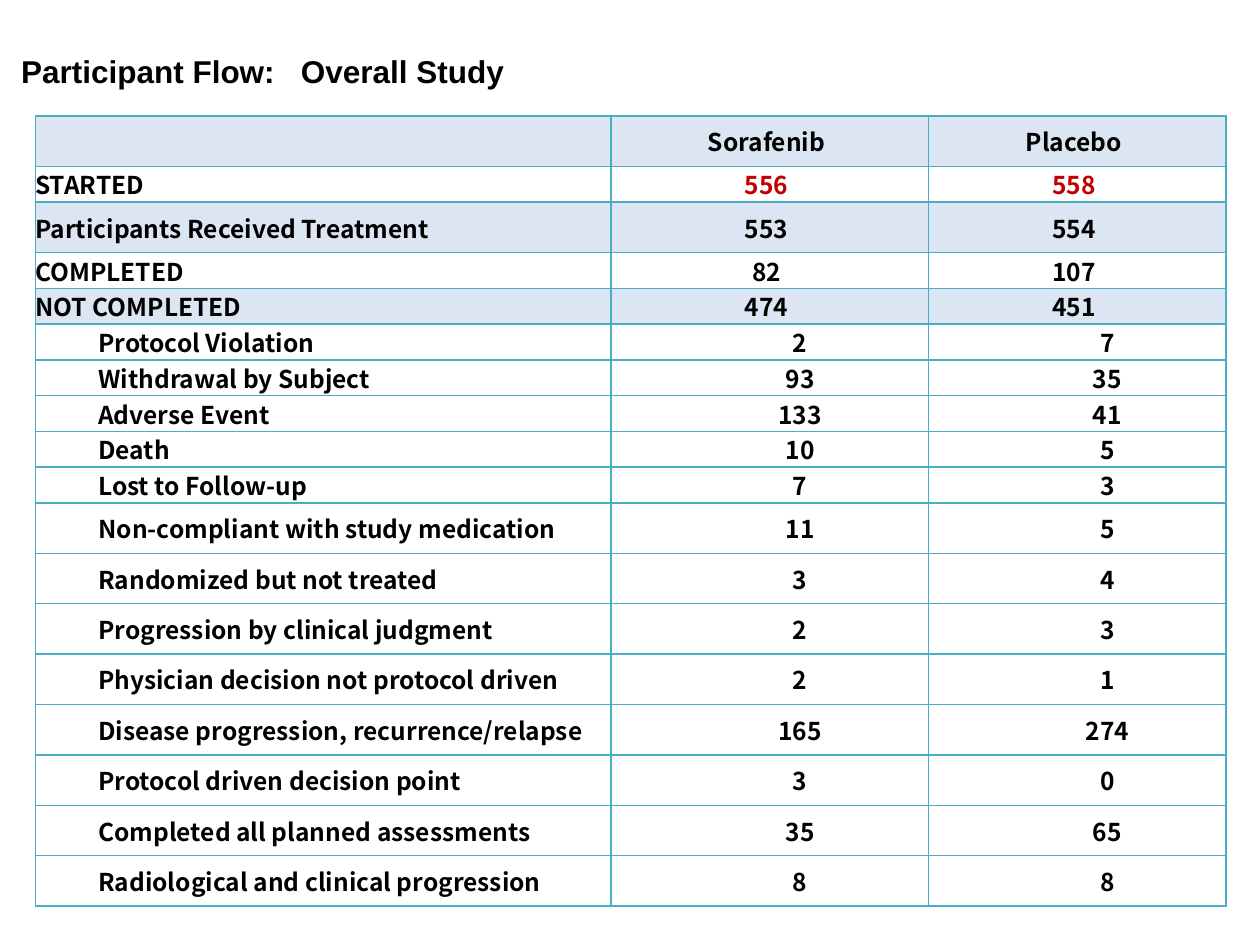
from lxml import etree
from pptx import Presentation
from pptx.dml.color import RGBColor
from pptx.enum.text import MSO_ANCHOR, PP_ALIGN
from pptx.oxml.ns import qn
from pptx.util import Inches, Pt

BLACK = RGBColor(0x00, 0x00, 0x00)
RED = RGBColor(0xC0, 0x00, 0x00)
TEAL = RGBColor(0x4B, 0xAC, 0xC6)
PALE_BLUE = RGBColor(0xDC, 0xE6, 0xF2)

TITLE_FONT = "Arial"
TABLE_FONT = "Noto Sans CJK KR"

COLUMN_WIDTHS = (4.57, 2.52, 2.36)
SHORT_ROW, TALL_ROW = 0.27, 0.4
REASON_INDENT = 0.5
REASON_VALUE_MARGIN = 0.48
VALUE_MARGIN = 0.05

HEADER = ("", "Sorafenib", "Placebo")
MILESTONES = [
    ("STARTED", 556, 558),
    ("Participants Received Treatment", 553, 554),
    ("COMPLETED", 82, 107),
    ("NOT COMPLETED", 474, 451),
]
REASONS = [
    ("Protocol Violation", 2, 7),
    ("Withdrawal by Subject", 93, 35),
    ("Adverse Event", 133, 41),
    ("Death", 10, 5),
    ("Lost to Follow-up", 7, 3),
    ("Non-compliant with study medication", 11, 5),
    ("Randomized but not treated", 3, 4),
    ("Progression by clinical judgment", 2, 3),
    ("Physician decision not protocol driven", 2, 1),
    ("Disease progression, recurrence/relapse", 165, 274),
    ("Protocol driven decision point", 3, 0),
    ("Completed all planned assessments", 35, 65),
    ("Radiological and clinical progression", 8, 8),
]
ROWS = [HEADER] + MILESTONES + REASONS
FIRST_REASON = 1 + len(MILESTONES)
STARTED_ROW = 1
SHADED_ROWS = (0, 2, 4)
TALL_ROWS = {0, 2, *range(10, len(ROWS))}


def set_font(font, name, size, color):
    font.name = name
    font.size = Pt(size)
    font.bold = True
    font.color.rgb = color


def add_borders(cell, color, width):
    """Draw the four sides; lines must come before the fill in the cell."""
    properties = cell._tc.get_or_add_tcPr()
    for position, side in enumerate(("lnL", "lnR", "lnT", "lnB")):
        line = etree.Element(qn(f"a:{side}"), w=str(Pt(width)))
        fill = etree.SubElement(line, qn("a:solidFill"))
        etree.SubElement(fill, qn("a:srgbClr"), val=str(color))
        properties.insert(position, line)


def add_title(slide, left, top, width, height):
    text_box = slide.shapes.add_textbox(left, top, width, height)
    frame = text_box.text_frame
    frame.word_wrap = True
    frame.vertical_anchor = MSO_ANCHOR.MIDDLE
    paragraph = frame.paragraphs[0]
    paragraph.text = "Participant Flow:\tOverall Study"
    set_font(paragraph.font, TITLE_FONT, 18, BLACK)
    # A tab stop sets the gap between the two parts of the title
    tab_list = etree.Element(qn("a:tabLst"))
    etree.SubElement(tab_list, qn("a:tab"), pos=str(Inches(2.22)), algn="l")
    paragraph._p.get_or_add_pPr().insert(0, tab_list)


def fill_cell(cell, value, row, column):
    is_reason = row >= FIRST_REASON
    is_value = column > 0
    cell.margin_left = cell.margin_right = 0
    cell.margin_top = cell.margin_bottom = 0
    cell.vertical_anchor = MSO_ANCHOR.MIDDLE

    # Labels are indented by level; values are centred, reasons further right
    paragraph = cell.text_frame.paragraphs[0]
    paragraph.text = str(value)
    if is_value:
        paragraph.alignment = PP_ALIGN.CENTER
        if is_reason:
            cell.margin_left = Inches(REASON_VALUE_MARGIN)
        else:
            cell.margin_right = Inches(VALUE_MARGIN)
    elif is_reason:
        paragraph.level = 1
        paragraph_properties = paragraph._p.get_or_add_pPr()
        paragraph_properties.set("marL", str(Inches(REASON_INDENT)))
        paragraph_properties.set("indent", "0")
    color = RED if is_value and row == STARTED_ROW else BLACK
    set_font(paragraph.font, TABLE_FONT, 14, color)

    if row in SHADED_ROWS:
        cell.fill.solid()
        cell.fill.fore_color.rgb = PALE_BLUE
    else:
        cell.fill.background()
    add_borders(cell, TEAL, 1)


def add_flow_table(slide, left, top, width, height):
    frame = slide.shapes.add_table(
        len(ROWS), len(COLUMN_WIDTHS), left, top, width, height
    )
    table = frame.table
    table.first_row = False
    table.horz_banding = False
    for column, share in zip(table.columns, COLUMN_WIDTHS):
        column.width = int(width * share / sum(COLUMN_WIDTHS))
    for row, values in enumerate(ROWS):
        row_height = TALL_ROW if row in TALL_ROWS else SHORT_ROW
        table.rows[row].height = Inches(row_height)
        for column, value in enumerate(values):
            fill_cell(table.cell(row, column), value, row, column)


def main():
    presentation = Presentation()
    presentation.slide_width = Inches(10)
    presentation.slide_height = Inches(7.5)
    slide = presentation.slides.add_slide(presentation.slide_layouts[6])

    add_flow_table(slide, Inches(0.28), Inches(0.92), Inches(9.45), Inches(6.14))
    add_title(slide, Inches(0.07), Inches(0.36), Inches(4.14), Inches(0.4))
    presentation.save("out.pptx")


if __name__ == "__main__":
    main()
